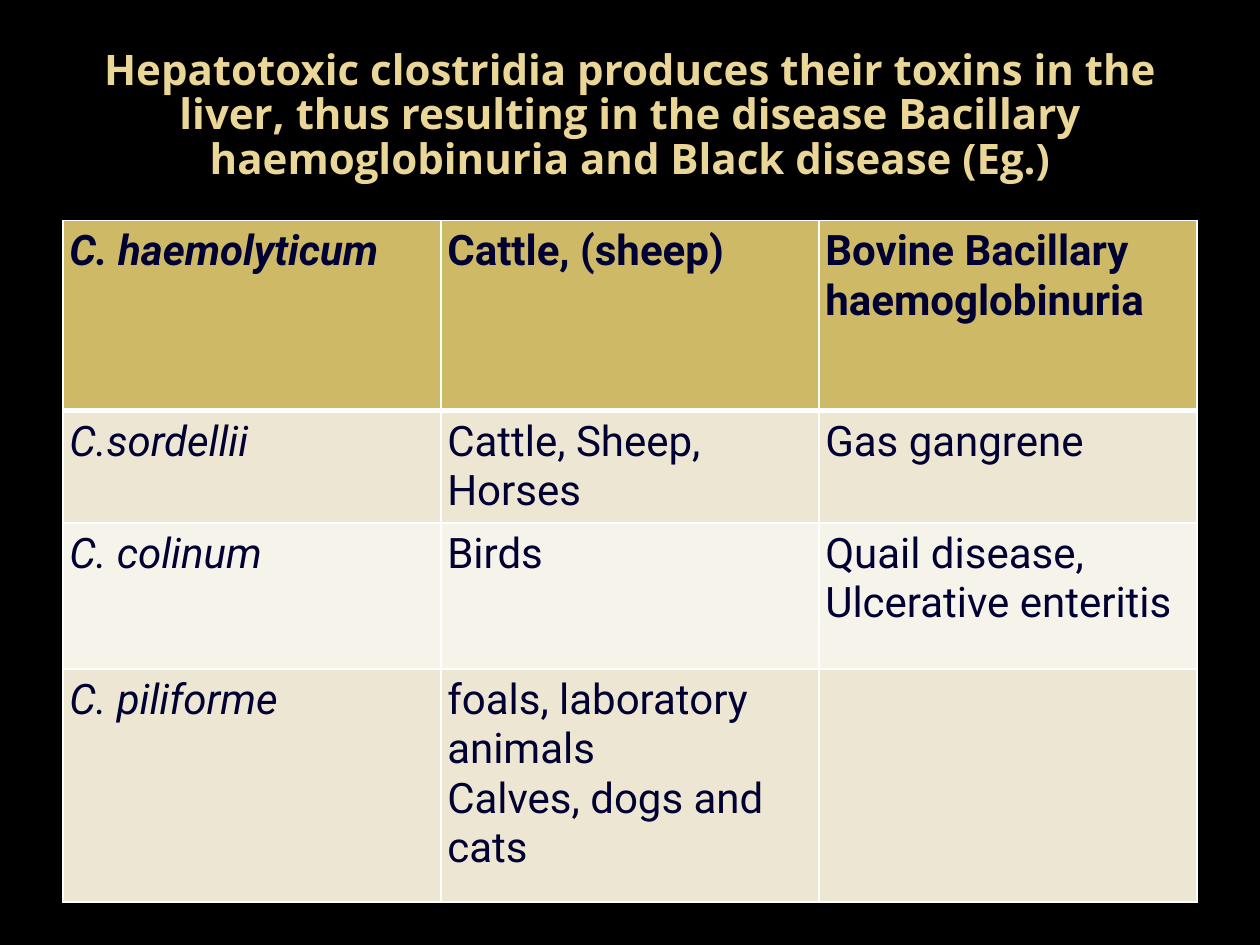
import pptx
import pptx.util
import pptx.dml.color
import pptx.enum.text
from dataclasses import dataclass
from lxml import etree
from pptx.oxml.ns import qn

# Content
HEADING = ("Hepatotoxic clostridia produces their toxins in the liver, thus resulting "
           "in the disease Bacillary haemoglobinuria and Black disease (Eg.)")
CLOSTRIDIA = [  # species, hosts, disease
    ("C. haemolyticum", "Cattle, (sheep)", "Bovine Bacillary haemoglobinuria"),
    ("C.sordellii", "Cattle, Sheep, Horses", "Gas gangrene"),
    ("C. colinum", "Birds", "Quail disease, Ulcerative enteritis"),
    ("C. piliforme", "foals, laboratory animals\nCalves, dogs and cats", ""),
]
ROW_HEIGHTS = [1.51, 0.89, 1.16, 1.85]


@dataclass(frozen=True)
class Theme:
    background: str = "000000"
    heading: str = "EAD696"
    ink: str = "000033"
    header: str = "CEB966"
    bands: tuple = ("EDE6D3", "F6F3EA")
    rule: str = "FFFFFF"
    heading_font: str = "Open Sans"
    table_font: str = "Roboto"
    size: int = 24


THEME = Theme()
WIDTH, HEIGHT = 10, 7.5
MARGIN = WIDTH * 0.05
CONTENT_WIDTH = WIDTH - 2 * MARGIN
HEADING_TOP, HEADING_HEIGHT = 0.3, 1.25
TABLE_TOP = 1.75
CELL_INSET = 0.05


def inches(*lengths):
    return [pptx.util.Inches(length) for length in lengths]


def paint(fill, color):
    fill.solid()
    fill.fore_color.rgb = pptx.dml.color.RGBColor.from_string(color)


def write(frame, text, *, font, color, bold=False, italic=False, align=None, spacing=None):
    paragraph = frame.paragraphs[0]
    paragraph.text = text  # a newline becomes a line break
    paragraph.alignment = align
    paragraph.line_spacing = spacing
    for run in paragraph.runs:
        run.font.name, run.font.size = font, pptx.util.Pt(THEME.size)
        run.font.bold, run.font.italic = bold, italic
        paint(run.font.fill, color)


def rule_cell(cell, widths):
    """Draw the borders; they must come before the fill in the cell properties."""
    properties = cell._tc.get_or_add_tcPr()
    for place, (side, points) in enumerate(widths.items()):
        line = etree.Element(qn(f"a:ln{side}"), w=str(pptx.util.Pt(points)))
        solid = etree.SubElement(line, qn("a:solidFill"))
        etree.SubElement(solid, qn("a:srgbClr"), val=THEME.rule)
        properties.insert(place, line)


def add_heading(slide):
    title = slide.shapes.title
    title.left, title.top, title.width, title.height = inches(
        MARGIN, HEADING_TOP, CONTENT_WIDTH, HEADING_HEIGHT)
    frame = title.text_frame
    frame.auto_size = pptx.enum.text.MSO_AUTO_SIZE.NONE
    frame.vertical_anchor = pptx.enum.text.MSO_ANCHOR.MIDDLE
    write(frame, HEADING, font=THEME.heading_font, color=THEME.heading, bold=True,
          align=pptx.enum.text.PP_ALIGN.CENTER, spacing=0.88)


def add_clostridia_table(slide):
    columns = len(CLOSTRIDIA[0])
    table = slide.shapes.add_table(
        len(CLOSTRIDIA), columns,
        *inches(MARGIN, TABLE_TOP, CONTENT_WIDTH, sum(ROW_HEIGHTS))).table
    for column in table.columns:
        column.width = pptx.util.Inches(CONTENT_WIDTH / columns)
    for r, (entry, height) in enumerate(zip(CLOSTRIDIA, ROW_HEIGHTS)):
        table.rows[r].height = pptx.util.Inches(height)
        is_header = r == 0
        for c, text in enumerate(entry):
            cell = table.cell(r, c)
            cell.margin_left = cell.margin_right = pptx.util.Inches(CELL_INSET)
            cell.margin_top = cell.margin_bottom = pptx.util.Inches(CELL_INSET)
            paint(cell.fill, THEME.header if is_header else THEME.bands[(r - 1) % 2])
            # The rule under the header row is heavier
            rule_cell(cell, {"L": 1, "R": 1, "T": 3 if r == 1 else 1,
                             "B": 3 if is_header else 1})
            write(cell.text_frame, text, font=THEME.table_font, color=THEME.ink,
                  bold=is_header, italic=c == 0)


def main():
    deck = pptx.Presentation()
    deck.slide_width, deck.slide_height = inches(WIDTH, HEIGHT)
    slide = deck.slides.add_slide(deck.slide_layouts.get_by_name("Title Only"))
    paint(slide.background.fill, THEME.background)
    add_heading(slide)
    add_clostridia_table(slide)
    deck.save("out.pptx")


if __name__ == "__main__":
    main()
